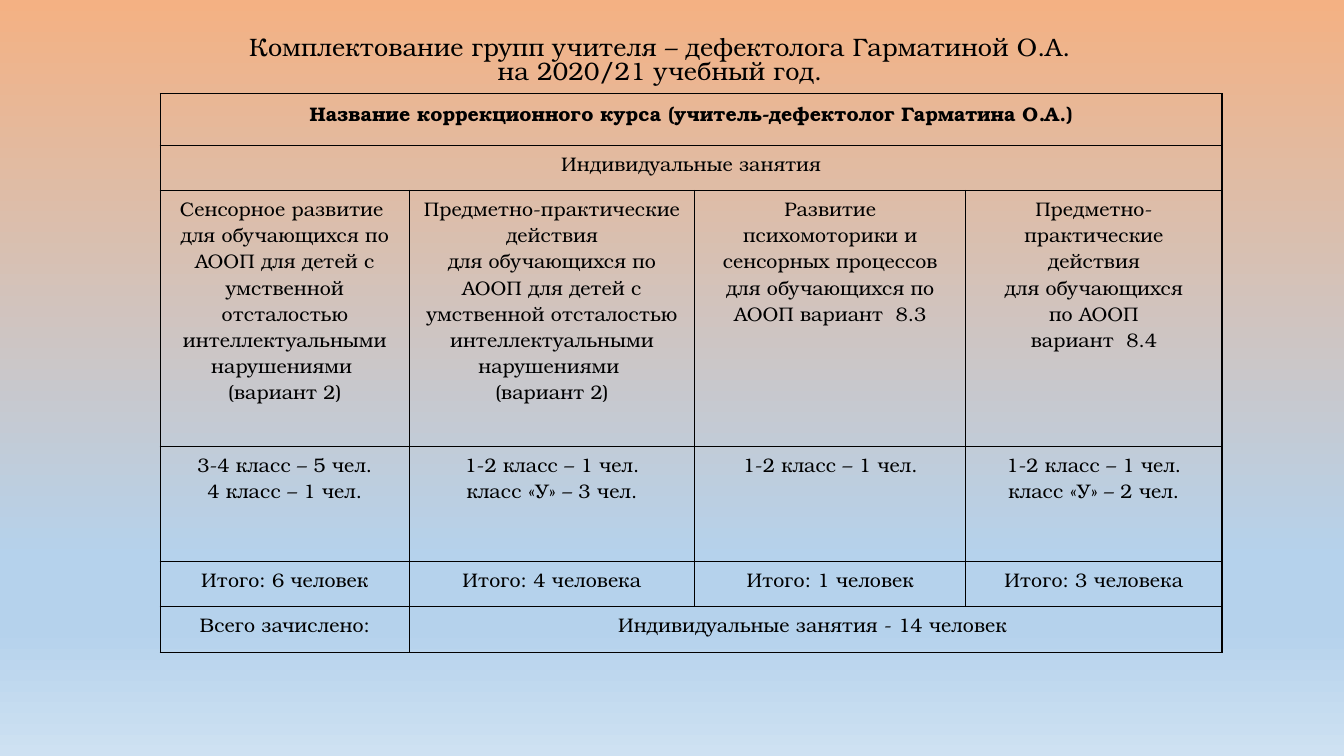
"""Build a slide with the table of a special-needs teacher's lesson groups."""
from copy import deepcopy
from dataclasses import dataclass

from lxml.etree import SubElement
from pptx import Presentation
from pptx.dml.color import RGBColor
from pptx.enum.text import MSO_ANCHOR, PP_ALIGN
from pptx.oxml.ns import qn
from pptx.slide import Slide
from pptx.table import Table, _Cell
from pptx.text.text import TextFrame
from pptx.util import Inches, Pt

SLIDE_WIDTH, SLIDE_HEIGHT = Inches(13.33), Inches(7.5)
GRID_COLUMNS, GRID_ROWS = 1333, 750


@dataclass(frozen=True)
class Theme:
    font: str = "TeX Gyre Bonum"
    ink: str = "000000"
    title_size: int = 18
    table_size: int = 14
    border_width: int = 1
    background: tuple[tuple[float, str], ...] = (
        (0, "F4B183"), (0.74, "B5D2EC"), (0.83, "B5D2EC"), (1, "CEE1F2"))


@dataclass(frozen=True)
class Entry:
    text: str
    span: int = 1
    bold: bool = False


@dataclass(frozen=True)
class TableRow:
    height: int
    entries: tuple[Entry, ...]


THEME = Theme()
TITLE = "Комплектование групп учителя – дефектолога Гарматиной О.А. \vна 2020/21 учебный год. "
DISABILITY = ("для обучающихся по АООП для детей с умственной отсталостью "
              "интеллектуальными нарушениями \n(вариант 2)")
COLUMN_WIDTHS = (247, 283, 269, 254)
TABLE_ROWS = (
    TableRow(51, (Entry("Название коррекционного курса (учитель-дефектолог Гарматина О.А.)",
                        span=4, bold=True),)),
    TableRow(45, (Entry("Индивидуальные занятия", span=4),)),
    TableRow(254, (
        Entry("Сенсорное развитие \n" + DISABILITY),
        Entry("Предметно-практические действия\n" + DISABILITY),
        Entry("Развитие психомоторики и сенсорных процессов "
              "для обучающихся по АООП вариант  8.3"),
        Entry("Предметно-практические действия\nдля обучающихся\n по АООП \nвариант  8.4"))),
    TableRow(114, (
        Entry("3-4 класс – 5 чел.\n4 класс – 1 чел."),
        Entry("1-2 класс – 1 чел.\nкласс «У» – 3 чел."),
        Entry("1-2 класс – 1 чел."),
        Entry("1-2 класс – 1 чел.\nкласс «У» – 2 чел."))),
    TableRow(45, (Entry("Итого: 6 человек"), Entry("Итого: 4 человека"),
                  Entry("Итого: 1 человек"), Entry("Итого: 3 человека"))),
    TableRow(45, (Entry("Всего зачислено:"),
                  Entry("Индивидуальные занятия - 14 человек ", span=3))),
)


def across(columns: int) -> int:
    """Return the width of a number of grid columns."""
    return round(SLIDE_WIDTH * columns / GRID_COLUMNS)


def down(rows: int) -> int:
    """Return the height of a number of grid rows."""
    return round(SLIDE_HEIGHT * rows / GRID_ROWS)


def write(frame: TextFrame, text: str, *, size: int, bold: bool = False,
          spacing: float = 1.0) -> None:
    """Write centred text, one paragraph per line."""
    frame.word_wrap = True
    frame.text = text
    for para in frame.paragraphs:
        para.alignment = PP_ALIGN.CENTER
        para.line_spacing = spacing
        for span in para.runs:
            span.font.name = THEME.font
            span.font.size = Pt(size)
            span.font.bold = bold
            span.font.color.rgb = RGBColor.from_string(THEME.ink)


def paint_background(page: Slide) -> None:
    """Fill the page with the vertical gradient."""
    fill = page.background.fill
    fill.gradient()
    fill.gradient_angle = 270
    stop_list = page._element.find(".//" + qn("a:gsLst"))
    while len(stop_list) < len(THEME.background):
        stop_list.append(deepcopy(stop_list[0]))
    for stop, (position, color) in zip(fill.gradient_stops, THEME.background):
        stop.color.rgb = RGBColor.from_string(color)
        stop.position = position


def style_cell(cell: _Cell) -> None:
    """Draw the four borders of a cell and clear its fill."""
    properties = cell._tc.get_or_add_tcPr()
    for side in ("a:lnL", "a:lnR", "a:lnT", "a:lnB"):
        line = SubElement(properties, qn(side), w=str(Pt(THEME.border_width)))
        SubElement(SubElement(line, qn("a:solidFill")), qn("a:srgbClr"), val=THEME.ink)
    cell.fill.background()


def fill_row(table: Table, index: int, row: TableRow) -> None:
    """Merge and fill the cells of one table row."""
    table.rows[index].height = down(row.height)
    column = 0
    for entry in row.entries:
        cell = table.cell(index, column)
        if entry.span > 1:
            cell.merge(table.cell(index, column + entry.span - 1))
        write(cell.text_frame, entry.text, size=THEME.table_size, bold=entry.bold)
        column += entry.span


def add_title(page: Slide) -> None:
    """Add the heading above the table."""
    box = page.shapes.add_textbox(across(19), down(29), across(1279), down(64))
    box.text_frame.vertical_anchor = MSO_ANCHOR.MIDDLE
    write(box.text_frame, TITLE, size=THEME.title_size, spacing=0.8)


def add_groups_table(page: Slide) -> None:
    """Add the table of courses and groups."""
    table = page.shapes.add_table(
        len(TABLE_ROWS), len(COLUMN_WIDTHS), across(159), down(93),
        across(sum(COLUMN_WIDTHS)), down(sum(row.height for row in TABLE_ROWS))).table
    table.first_row = table.horz_banding = False
    for column, width in zip(table.columns, COLUMN_WIDTHS):
        column.width = across(width)
    for index, row in enumerate(TABLE_ROWS):
        fill_row(table, index, row)
    for cell in table.iter_cells():
        style_cell(cell)


def main() -> None:
    """Build and save the deck."""
    deck = Presentation()
    deck.slide_width, deck.slide_height = SLIDE_WIDTH, SLIDE_HEIGHT
    page = deck.slides.add_slide(deck.slide_layouts[6])
    paint_background(page)
    add_title(page)
    add_groups_table(page)
    deck.save("out.pptx")


if __name__ == "__main__":
    main()
